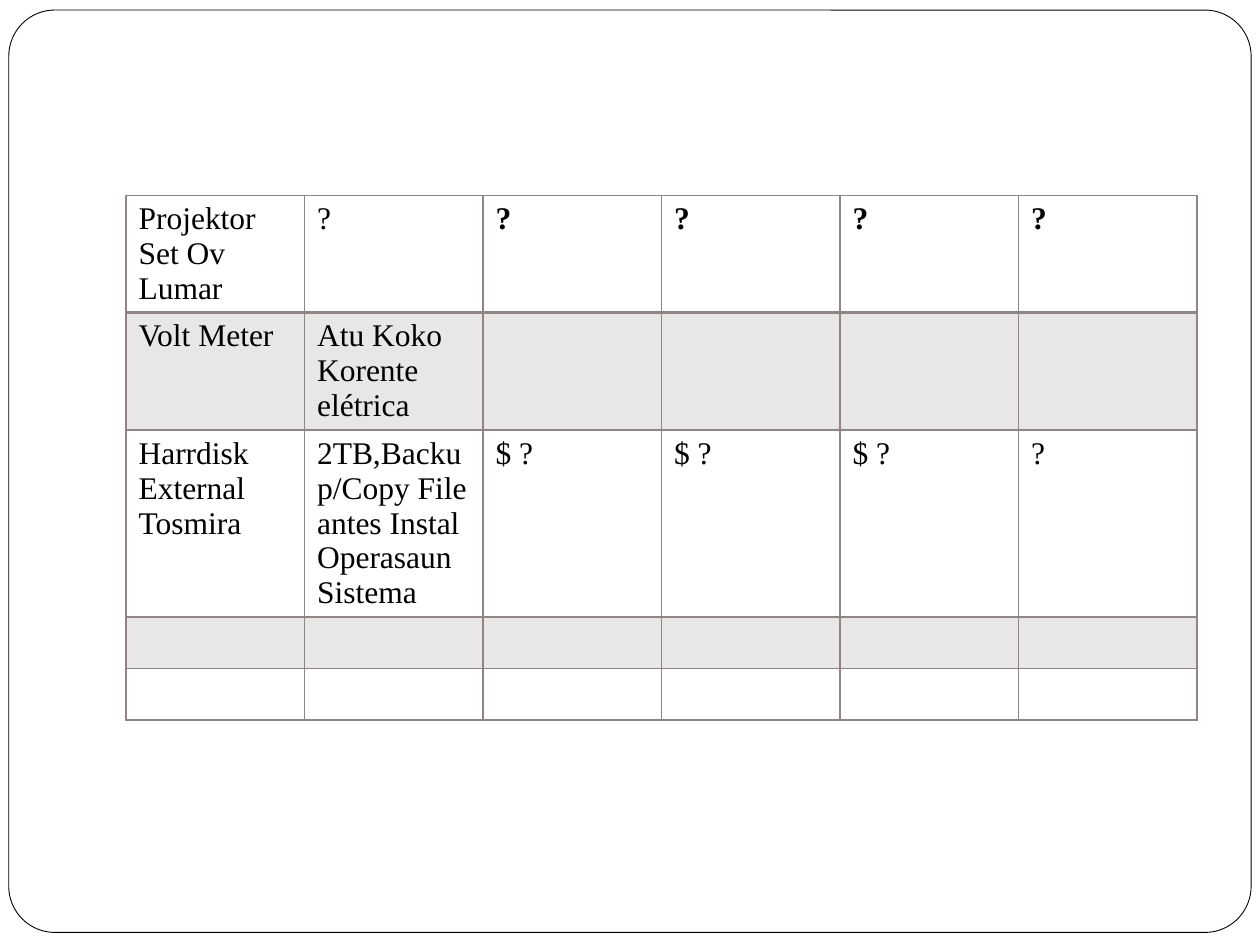
from lxml.etree import SubElement as Sub
from pptx import Presentation as Deck
from pptx.dml.color import RGBColor as Rgb
from pptx.enum.shapes import MSO_SHAPE as Kind
from pptx.oxml import parse_xml as to_xml
from pptx.oxml.ns import nsdecls, qn
from pptx.util import Inches, Pt

MAUVE = "918485"
FONT = {"name": "Times New Roman", "size": Pt(18)}
ROWS = [
    ["Projektor Set Ov Lumar"] + ["?"] * 5,
    ["Volt Meter", "Atu Koko Korente elétrica"],
    ["Harrdisk External Tosmira",
     "2TB,Backup/Copy File antes Instal Operasaun Sistema",
     "$ ?", "$ ?", "$ ?", "?"],
    [],
    [],
]
COLS = 6


def paint(color, code):
    color.rgb = Rgb.from_string(code)


def add_frame(slide):
    frame = slide.shapes.add_shape(
        Kind.ROUNDED_RECTANGLE,
        Inches(0.07), Inches(0.08), Inches(9.86), Inches(7.32))
    frame.adjustments[0] = 0.05
    frame.shadow.inherit = False
    frame.fill.solid()
    paint(frame.fill.fore_color, "FFFFFF")
    paint(frame.line.color, "000000")
    frame.line.width = Pt(0.5)


def tint(cell, code, alpha):
    """Fill the cell with a colour at alpha percent opacity."""
    cell.fill.solid()
    paint(cell.fill.fore_color, code)
    color = cell._tc.tcPr.find(".//" + qn("a:srgbClr"))
    Sub(color, qn("a:alpha"), val=str(alpha * 1000))


def edge(cell, widths):
    """Draw the borders, given as side: points, ahead of the cell fill."""
    props = cell._tc.get_or_add_tcPr()
    for spot, (side, width) in enumerate(widths.items()):
        props.insert(spot, to_xml(
            f'<a:ln{side} {nsdecls("a")} w="{Pt(width)}">'
            f'<a:solidFill><a:srgbClr val="{MAUVE}"/></a:solidFill>'
            f'</a:ln{side}>'))


def write(cell, text, bold):
    cell.text = text
    para = cell.text_frame.paragraphs[0]
    for item in [para, *para.runs]:
        for key, value in {**FONT, "bold": bold}.items():
            setattr(item.font, key, value)
        paint(item.font.color, "000000")


def add_grid(slide):
    grid = slide.shapes.add_table(
        len(ROWS), COLS,
        Inches(1), Inches(1.55), Inches(8.5), Inches(2.05)).table
    grid.first_row = grid.horz_banding = False
    for r, row in enumerate(ROWS):
        for c in range(COLS):
            cell = grid.cell(r, c)
            text = row[c] if c < len(row) else ""
            write(cell, text, bold=r == 0 and c > 1)
            if r % 2:
                tint(cell, MAUVE, 20)
            else:
                cell.fill.background()
            edge(cell, {"L": 1, "R": 1,
                        "T": 2 if r == 1 else 1,
                        "B": 2 if r == 0 else 1})


def main():
    deck = Deck()
    deck.slide_width, deck.slide_height = Inches(10), Inches(7.5)
    slide = deck.slides.add_slide(deck.slide_layouts[6])
    add_frame(slide)
    add_grid(slide)
    deck.save("out.pptx")


if __name__ == "__main__":
    main()
